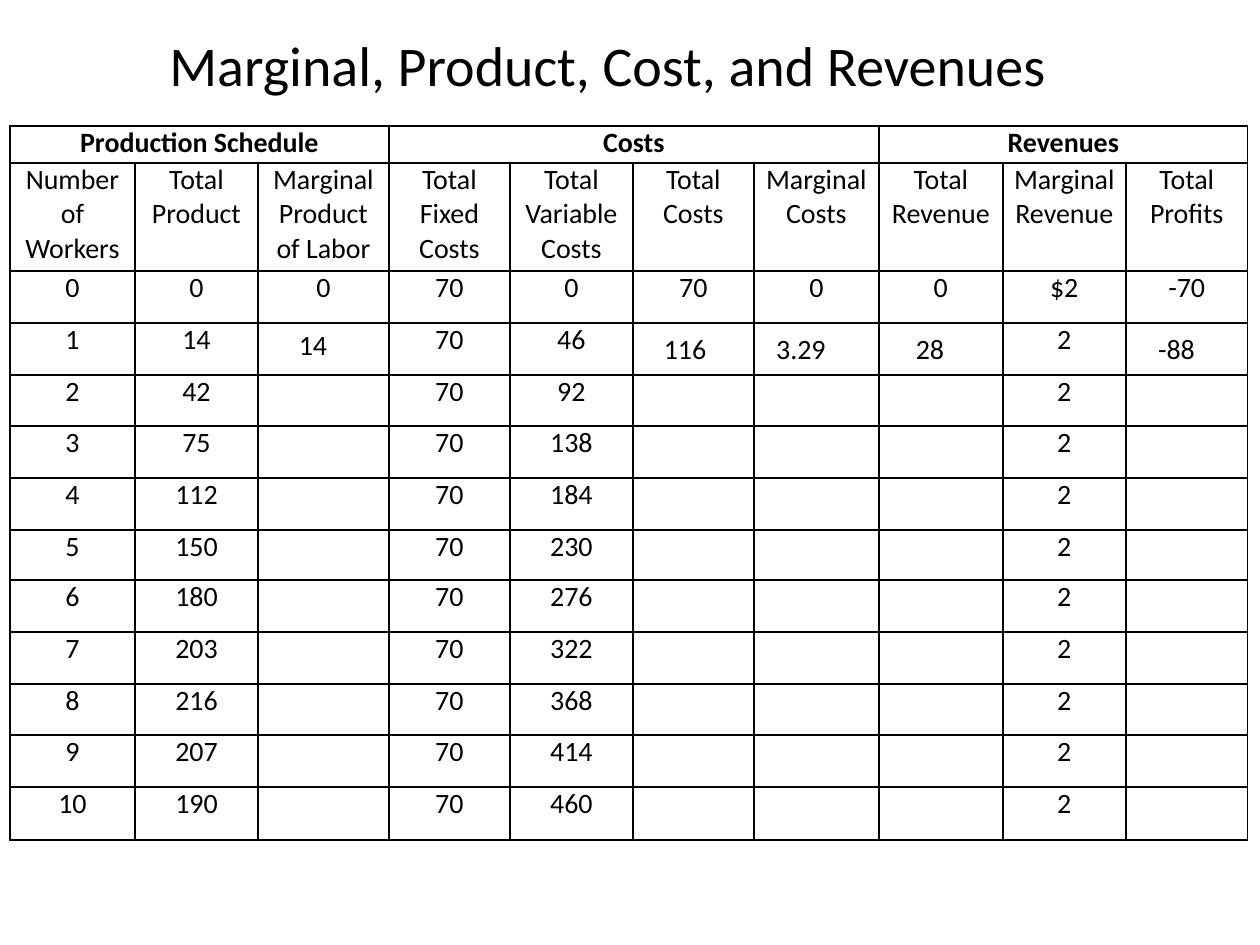
from lxml.etree import SubElement
from pptx import Presentation
from pptx.dml.color import RGBColor as Rgb
from pptx.enum.text import MSO_AUTO_SIZE as Fit, PP_ALIGN as Align
from pptx.oxml import parse_xml
from pptx.oxml.ns import qn
from pptx.util import Emu, Pt

FONT = "Calibri"
HUES = {"ink": "000000", "page": "FFFFFF"}
WIDE = [125, 123, 131, 121, 123, 121, 125, 124, 123, 122]
HIGH = [37, 108, 52, 52, 51, 52, 52, 50, 52, 52, 51, 52, 53]
GROUPS = [("Production Schedule", 0, 2), ("Costs", 3, 6), ("Revenues", 7, 9)]
HEADS = ["Number of Workers", "Total Product", "Marginal Product of Labor",
         "Total Fixed Costs", "Total Variable Costs", "Total Costs",
         "Marginal Costs", "Total Revenue", "Marginal Revenue", "Total Profits"]
START = [0, 0, 0, 70, 0, 70, 0, 0, "$2", -70]
OUTPUT = [14, 42, 75, 112, 150, 180, 203, 216, 207, 190]
ANSWERS = [("14", 286, 321, 54), ("116", 651, 325, 68), ("3.29", 763, 325, 76),
           ("28", 903, 325, 54), ("-88", 1145, 325, 63)]


def px(n):
    return Emu(round(n * 914400 / 126))


def write(frame, text, size=16, bold=False, align=Align.CENTER):
    para = frame.paragraphs[0]
    para.alignment = align
    run = para.add_run()
    run.text = str(text)
    font = run.font
    font.name, font.size, font.bold = FONT, Pt(size), bold
    font.color.rgb = Rgb.from_string(HUES["ink"])


def label(slide, text, box, wrap=False, **style):
    frame = slide.shapes.add_textbox(*map(px, box)).text_frame
    frame.word_wrap = wrap
    frame.auto_size = Fit.SHAPE_TO_FIT_TEXT
    write(frame, text, **style)


def frame_cell(cell):
    cell.margin_left = cell.margin_right = px(9)
    cell.margin_top = cell.margin_bottom = 0
    cell.fill.background()
    props = cell._tc.get_or_add_tcPr()
    for i, side in enumerate(("a:lnL", "a:lnR", "a:lnT", "a:lnB")):
        line = props.makeelement(qn(side), {"w": str(Pt(1))})
        fill = SubElement(line, qn("a:solidFill"))
        SubElement(fill, qn("a:srgbClr"), val=HUES["ink"])
        props.insert(i, line)


def schedule(slide, box):
    body = [[n, made, "", 70, 46 * n, "", "", "", 2, ""]
            for n, made in enumerate(OUTPUT, 1)]
    rows = [HEADS, START] + body
    grid = slide.shapes.add_table(len(HIGH), len(WIDE), *map(px, box)).table
    grid.first_row = grid.horz_banding = False
    for col, wide in zip(grid.columns, WIDE):
        col.width = px(wide)
    for row, high in zip(grid.rows, HIGH):
        row.height = px(high)
    for cell in grid.iter_cells():
        frame_cell(cell)
    for text, first, last in GROUPS:
        grid.cell(0, first).merge(grid.cell(0, last))
        write(grid.cell(0, first).text_frame, text, bold=True)
    for r, row in enumerate(rows, 1):
        for c, text in enumerate(row):
            if text != "":
                write(grid.cell(r, c).text_frame, text)


def answers(slide, items):
    for text, left, top, wide in items:
        label(slide, text, (left, top, wide, 47))


def main():
    deck = Presentation()
    deck.slide_width, deck.slide_height = px(1260), px(945)
    slide = deck.slides.add_slide(deck.slide_layouts[6])
    fill = slide.background.fill
    fill.solid()
    fill.fore_color.rgb = Rgb.from_string(HUES["page"])
    schedule(slide, (10, 126, sum(WIDE), sum(HIGH)))
    label(slide, "Marginal, Product, Cost, and Revenues", (157, 24, 955, 81),
          wrap=True, size=32, align=Align.LEFT)
    answers(slide, ANSWERS[:1])
    answers(slide, ANSWERS[1:])
    deck.save("out.pptx")


if __name__ == "__main__":
    main()
